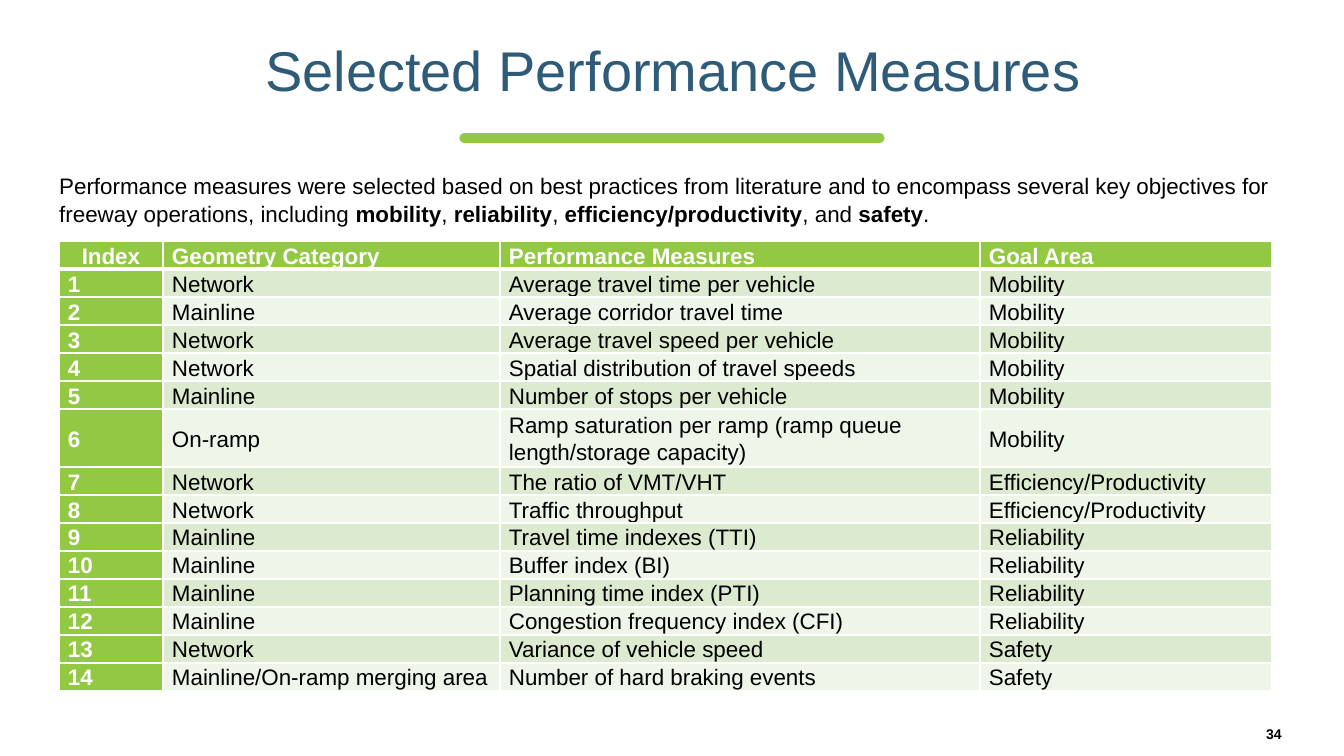
import dataclasses
import typing

import lxml.etree
import pptx
import pptx.dml.color
import pptx.enum.shapes
import pptx.enum.text
import pptx.oxml
import pptx.oxml.ns
import pptx.util

RGB = pptx.dml.color.RGBColor
ALIGN = pptx.enum.text.PP_ALIGN
ANCHOR = pptx.enum.text.MSO_ANCHOR
qn = pptx.oxml.ns.qn

GREEN = RGB(0x93, 0xC8, 0x43)
BLUE = RGB(0x2E, 0x5B, 0x78)
BLACK = RGB(0, 0, 0)
WHITE = RGB(0xFF, 0xFF, 0xFF)
BANDS = (RGB(0xDC, 0xEB, 0xCF), RGB(0xEE, 0xF5, 0xE9))
FONT = "Arial"

WIDTH, HEIGHT = 1344, 756
SCALE = 9144000 / WIDTH

COLS = (104, 337, 480, 292)
ROW, TALL = 28, 58
INSET = 9
HEAD = ("Index", "Geometry Category", "Performance Measures", "Goal Area")


class Measure(typing.NamedTuple):
    place: str
    name: str
    goal: str


MEASURES = (
    Measure("Network", "Average travel time per vehicle", "Mobility"),
    Measure("Mainline", "Average corridor travel time", "Mobility"),
    Measure("Network", "Average travel speed per vehicle", "Mobility"),
    Measure("Network", "Spatial distribution of travel speeds", "Mobility"),
    Measure("Mainline", "Number of stops per vehicle", "Mobility"),
    Measure("On-ramp", "Ramp saturation per ramp (ramp queue length/storage capacity)",
            "Mobility"),
    Measure("Network", "The ratio of VMT/VHT", "Efficiency/Productivity"),
    Measure("Network", "Traffic throughput", "Efficiency/Productivity"),
    Measure("Mainline", "Travel time indexes (TTI)", "Reliability"),
    Measure("Mainline", "Buffer index (BI)", "Reliability"),
    Measure("Mainline", "Planning time index (PTI)", "Reliability"),
    Measure("Mainline", "Congestion frequency index (CFI)", "Reliability"),
    Measure("Network", "Variance of vehicle speed", "Safety"),
    Measure("Mainline/On-ramp merging area", "Number of hard braking events", "Safety"),
)


@dataclasses.dataclass(frozen=True)
class Label:
    left: int
    top: int
    width: int
    height: int
    texts: tuple[str, ...]  # a text that starts with * is bold
    size: float
    color: RGB = BLACK
    align: ALIGN = ALIGN.LEFT
    anchor: ANCHOR = ANCHOR.TOP
    spacing: float = 1.0
    before: int = 0


LABELS = (
    Label(46, 28, 1254, 90, ("Selected Performance Measures",), 30, BLUE,
          ALIGN.CENTER, ANCHOR.MIDDLE, 0.9),
    Label(46, 164, 1254, 103, (
        "Performance measures were selected based on best practices from literature "
        "and to encompass several key objectives for freeway operations, including ",
        "*mobility", ", ", "*reliability", ", ", "*efficiency/productivity",
        ", and ", "*safety", "."), 12, spacing=1.05, before=10),
    Label(1196, 719, 156, 31, ("*34",), 7.5, align=ALIGN.CENTER),
)


def px(count: int) -> pptx.util.Emu:
    return pptx.util.Emu(round(count * SCALE))


def style(run, size: float, color: RGB, bold: bool) -> None:
    run.font.name = FONT
    run.font.size = pptx.util.Pt(size)
    run.font.color.rgb = color
    run.font.bold = bold


def add_label(slide, label: Label) -> None:
    box = slide.shapes.add_textbox(
        px(label.left), px(label.top), px(label.width), px(label.height))
    frame = box.text_frame
    frame.word_wrap = True
    frame.vertical_anchor = label.anchor
    para = frame.paragraphs[0]
    para.alignment = label.align
    para.line_spacing = label.spacing
    para.space_before = pptx.util.Pt(label.before)
    for text in label.texts:
        run = para.add_run()
        run.text = text.removeprefix("*")
        style(run, label.size, label.color, text.startswith("*"))


def add_rule(slide) -> None:
    """Draw the round-ended line below the title."""
    rule = slide.shapes.add_connector(
        pptx.enum.shapes.MSO_CONNECTOR.STRAIGHT, px(880), px(138), px(464), px(138))
    rule.line.color.rgb = GREEN
    rule.line.width = pptx.util.Pt(5)
    props = rule.element.spPr
    props.find(qn("a:ln")).set("cap", "rnd")
    lxml.etree.SubElement(props, qn("a:effectLst"))


def set_edges(cell, bottom: int) -> None:
    """Give a cell white borders; bottom is the lower one in points."""
    props = cell._tc.get_or_add_tcPr()
    for spot, (side, points) in enumerate(
            (("L", 1), ("R", 1), ("T", 1), ("B", bottom))):
        edge = lxml.etree.Element(qn(f"a:ln{side}"), w=str(int(pptx.util.Pt(points))))
        fill = lxml.etree.SubElement(edge, qn("a:solidFill"))
        lxml.etree.SubElement(fill, qn("a:srgbClr"), val=str(WHITE))
        props.insert(spot, edge)


def fill_cell(cell, text: str, row: int, col: int) -> None:
    strong = row == 0 or col == 0
    cell.fill.solid()
    cell.fill.fore_color.rgb = GREEN if strong else BANDS[(row - 1) % 2]
    cell.margin_left = cell.margin_right = px(INSET)
    cell.margin_top = cell.margin_bottom = 0
    cell.vertical_anchor = ANCHOR.MIDDLE
    cell.text_frame.text = text
    para = cell.text_frame.paragraphs[0]
    para.alignment = ALIGN.CENTER if row == col == 0 else ALIGN.LEFT
    para.line_spacing = 1.1
    para.space_before = para.space_after = pptx.util.Pt(1)
    style(para.runs[0], 12, WHITE if strong else BLACK, strong)
    set_edges(cell, 3 if row == 0 else 1)


def add_grid(slide) -> None:
    rows = [HEAD, *((str(i), *item) for i, item in enumerate(MEASURES, 1))]
    tall = 6
    height = ROW * (len(rows) - 1) + TALL
    grid = slide.shapes.add_table(
        len(rows), len(COLS), px(59), px(241), px(sum(COLS)), px(height)).table
    for col, width in enumerate(COLS):
        grid.columns[col].width = px(width)
    for row, texts in enumerate(rows):
        grid.rows[row].height = px(TALL if row == tall else ROW)
        for col, text in enumerate(texts):
            fill_cell(grid.cell(row, col), text, row, col)


def main() -> None:
    deck = pptx.Presentation()
    deck.slide_width, deck.slide_height = px(WIDTH), px(HEIGHT)
    slide = deck.slides.add_slide(deck.slide_layouts[6])
    add_rule(slide)
    add_grid(slide)
    for label in LABELS:
        add_label(slide, label)
    deck.save("out.pptx")


if __name__ == "__main__":
    main()
